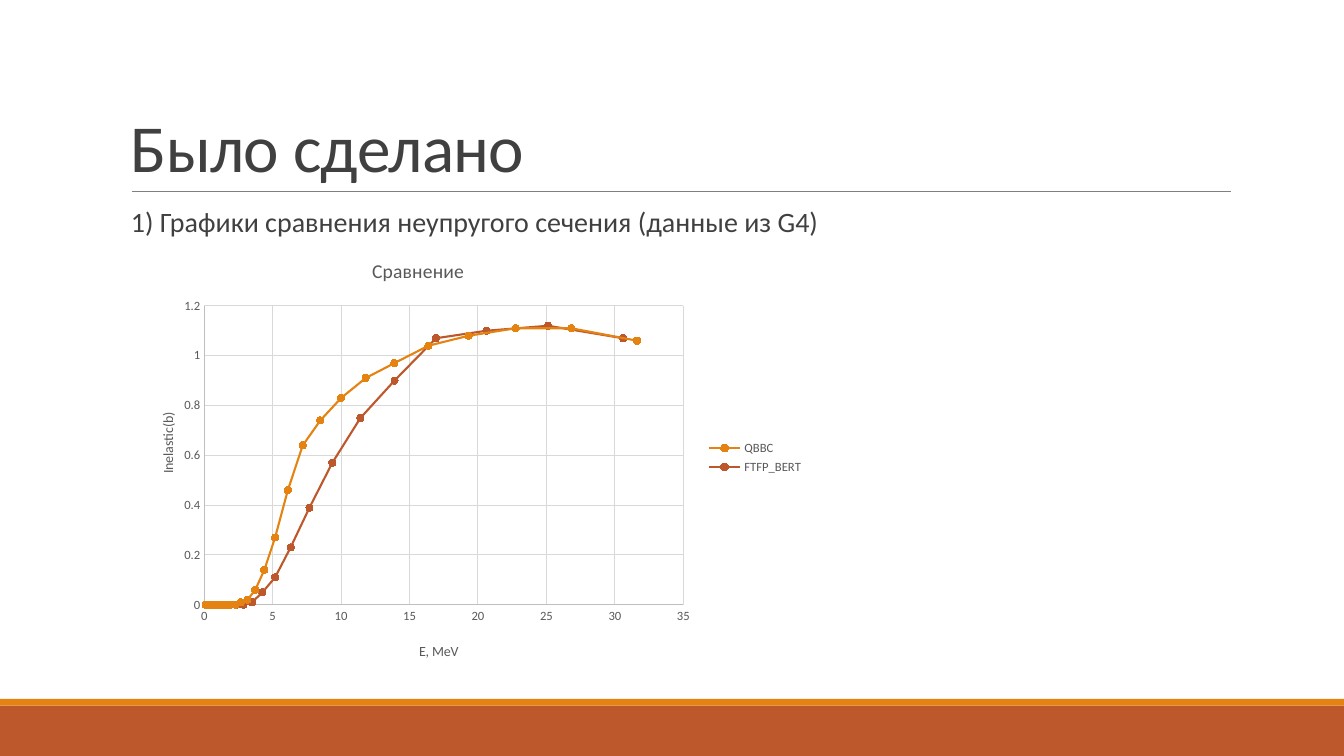
from dataclasses import dataclass

import lxml.etree
import pptx
import pptx.chart.data
import pptx.dml.color
import pptx.enum.chart
import pptx.enum.shapes
import pptx.enum.text
import pptx.oxml
import pptx.oxml.ns
import pptx.util
from pptx.util import Cm

ORANGE, RUST, DARK, GRAY = "E48312", "BD582C", "404040", "595959"
FONT = "Calibri"


@dataclass
class Band:
    top: float
    height: float
    color: str


@dataclass
class Caption:
    text: str
    frame: tuple[float, float, float, float]
    size: int
    anchor: pptx.enum.text.MSO_ANCHOR
    side_inset: float
    spacing: int
    paragraph: dict


@dataclass
class Curve:
    name: str
    color: str
    last_energy: float
    leading_zeros: int
    values: list[float]

    def energies(self) -> list[float]:
        steps = self.leading_zeros + len(self.values) - 1
        ratio = (self.last_energy / 0.1) ** (1 / steps)
        return [round(0.1 * ratio ** step, 2) for step in range(steps + 1)]


@dataclass
class AxisStyle:
    title: str
    position: tuple[float, float]
    maximum: float
    unit: float


BANDS = [Band(17.78, 1.27, RUST), Band(17.61, 0.17, ORANGE)]

CAPTIONS = [
    Caption("Было сделано", (3.05, 0.79, 27.94, 4.04), 48,
            pptx.enum.text.MSO_ANCHOR.BOTTOM, 0.25, -50, {"line_spacing": 0.85}),
    Caption("1) Графики сравнения неупругого сечения (данные из G4)",
            (3.05, 5.13, 27.94, 11.18), 20, pptx.enum.text.MSO_ANCHOR.TOP, 0, 0,
            {"line_spacing": 0.9, "space_before": pptx.util.Pt(12),
             "space_after": pptx.util.Pt(2)}),
]

CURVES = [
    Curve("QBBC", ORANGE, 31.62, 20,
          [0.01, 0.02, 0.06, 0.14, 0.27, 0.46, 0.64, 0.74,
           0.83, 0.91, 0.97, 1.04, 1.08, 1.11, 1.11, 1.06]),
    Curve("FTFP_BERT", RUST, 30.6, 18,
          [0.01, 0.05, 0.11, 0.23, 0.39, 0.57,
           0.75, 0.9, 1.07, 1.1, 1.12, 1.07]),
]

ENERGY_AXIS = AxisStyle("E, MeV", (0.42, 0.92), 35, 5)
SECTION_AXIS = AxisStyle("Inelastic(b)", (0.04, 0.39), 1.2, 0.2)


def rgb(color: str) -> pptx.dml.color.RGBColor:
    return pptx.dml.color.RGBColor.from_string(color)


def apply(target, values: dict) -> None:
    for name, value in values.items():
        setattr(target, name, value)


def style_font(font, size: float, color: str) -> None:
    apply(font, {"name": FONT, "size": pptx.util.Pt(size), "bold": False})
    font.color.rgb = rgb(color)


def style_line(line, color: str, width: float) -> None:
    line.color.rgb = rgb(color)
    line.width = pptx.util.Pt(width)


def place(element, index: int, **fractions: float) -> None:
    for old in element.findall(pptx.oxml.ns.qn("c:layout")):
        element.remove(old)
    target = '<c:layoutTarget val="inner"/>' if "w" in fractions else ""
    modes = "".join(f'<c:{key}Mode val="edge"/>' for key in ("x", "y"))
    sizes = "".join(f'<c:{key} val="{value}"/>' for key, value in fractions.items())
    namespace = pptx.oxml.ns.nsdecls("c")
    element.insert(index, pptx.oxml.parse_xml(
        f"<c:layout {namespace}><c:manualLayout>{target}{modes}{sizes}"
        "</c:manualLayout></c:layout>"))


def write_title(title, text: str, size: float, position: tuple[float, float]) -> None:
    span = title.text_frame.paragraphs[0].add_run()
    span.text = text
    style_font(span.font, size, GRAY)
    place(title.element, 1, x=position[0], y=position[1])


def add_band(page, band: Band, width: int) -> None:
    shape = page.shapes.add_shape(pptx.enum.shapes.MSO_SHAPE.RECTANGLE, 0,
                                  Cm(band.top), width, Cm(band.height))
    shape.shadow.inherit = False
    shape.fill.solid()
    shape.fill.fore_color.rgb = rgb(band.color)
    shape.line.fill.background()


def add_rule(page) -> None:
    rule = page.shapes.add_connector(pptx.enum.shapes.MSO_CONNECTOR.STRAIGHT,
                                     Cm(3.32), Cm(4.82), Cm(31.02), Cm(4.82))
    style_line(rule.line, "808080", 0.5)
    lxml.etree.SubElement(rule.element.spPr, pptx.oxml.ns.qn("a:effectLst"))


def add_caption(page, caption: Caption) -> None:
    box = page.shapes.add_textbox(*map(Cm, caption.frame))
    apply(box.text_frame, {
        "word_wrap": True, "vertical_anchor": caption.anchor,
        "margin_left": Cm(caption.side_inset), "margin_right": Cm(caption.side_inset),
        "margin_top": Cm(0.13), "margin_bottom": Cm(0.13)})
    para = box.text_frame.paragraphs[0]
    apply(para, caption.paragraph)
    if not caption.side_inset:
        para._p.get_or_add_pPr().set("marL", str(Cm(0.25)))
    span = para.add_run()
    span.text = caption.text
    style_font(span.font, caption.size, DARK)
    if caption.spacing:
        span.font._element.set("spc", str(caption.spacing))


def style_axis(axis, style: AxisStyle) -> None:
    no_tick = pptx.enum.chart.XL_TICK_MARK.NONE
    apply(axis, {"minimum_scale": 0, "maximum_scale": style.maximum,
                 "major_unit": style.unit, "has_major_gridlines": True,
                 "major_tick_mark": no_tick, "minor_tick_mark": no_tick})
    style_line(axis.major_gridlines.format.line, "D9D9D9", 0.75)
    style_line(axis.format.line, "BFBFBF", 0.75)
    apply(axis.tick_labels, {"number_format": "General",
                             "number_format_is_linked": False})
    style_font(axis.tick_labels.font, 9, GRAY)
    write_title(axis.axis_title, style.title, 10, style.position)


def style_curve(series, color: str) -> None:
    series.smooth = False
    style_line(series.format.line, color, 1.5)
    apply(series.marker, {"style": pptx.enum.chart.XL_MARKER_STYLE.CIRCLE, "size": 5})
    series.marker.format.fill.solid()
    series.marker.format.fill.fore_color.rgb = rgb(color)
    style_line(series.marker.format.line, color, 0.75)


def add_comparison(page) -> None:
    data = pptx.chart.data.XyChartData()
    for curve in CURVES:
        series = data.add_series(curve.name)
        sections = [0] * curve.leading_zeros + curve.values
        for energy, section in zip(curve.energies(), sections):
            series.add_data_point(energy, section)
    chart = page.shapes.add_chart(
        pptx.enum.chart.XL_CHART_TYPE.XY_SCATTER_LINES,
        Cm(3.25), Cm(6.07), Cm(17.25), Cm(10.92), data).chart
    style_font(chart.font, 10, "000000")
    apply(chart, {"has_title": True, "has_legend": True})
    write_title(chart.chart_title, "Сравнение", 14, (0.35, 0.03))
    apply(chart.legend, {"position": pptx.enum.chart.XL_LEGEND_POSITION.RIGHT,
                         "include_in_layout": False})
    style_font(chart.legend.font, 9, GRAY)
    chart.plots[0].vary_by_categories = False
    place(chart.element.xpath(".//c:plotArea")[0], 0, x=0.11, y=0.15, w=0.7, h=0.69)
    style_axis(chart.category_axis, ENERGY_AXIS)
    style_axis(chart.value_axis, SECTION_AXIS)
    for series, curve in zip(chart.plots[0].series, CURVES):
        style_curve(series, curve.color)


def main() -> None:
    deck = pptx.Presentation()
    apply(deck, {"slide_width": Cm(33.87), "slide_height": Cm(19.05)})
    page = deck.slides.add_slide(deck.slide_layouts[6])
    for band in BANDS:
        add_band(page, band, deck.slide_width)
    add_rule(page)
    for caption in CAPTIONS:
        add_caption(page, caption)
    add_comparison(page)
    deck.save("out.pptx")


if __name__ == "__main__":
    main()
